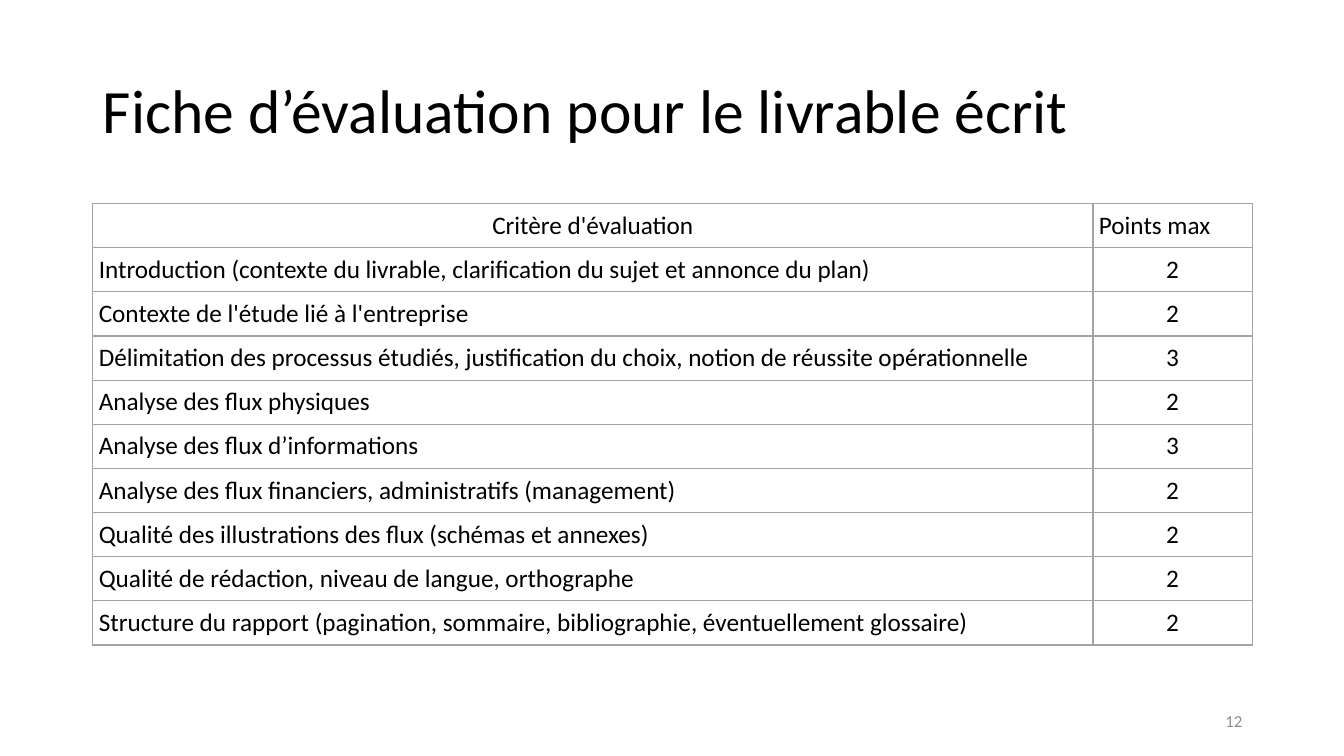
from lxml import etree
from pptx import Presentation
from pptx.dml.color import RGBColor
from pptx.enum.text import MSO_ANCHOR, PP_ALIGN
from pptx.oxml.ns import qn
from pptx.util import Inches, Pt

TITLE = "Fiche d’évaluation pour le livrable écrit"
HEADER = ("Critère d'évaluation", "Points max")
CRITERIA = [
    ("Introduction (contexte du livrable, clarification du sujet et annonce du plan)", 2),
    ("Contexte de l'étude lié à l'entreprise", 2),
    ("Délimitation des processus étudiés, justification du choix, notion de réussite opérationnelle", 3),
    ("Analyse des flux physiques", 2),
    ("Analyse des flux d’informations", 3),
    ("Analyse des flux financiers, administratifs (management)", 2),
    ("Qualité des illustrations des flux (schémas et annexes)", 2),
    ("Qualité de rédaction, niveau de langue, orthographe", 2),
    ("Structure du rapport (pagination, sommaire, bibliographie, éventuellement glossaire)", 2),
]
PAGE_NUMBER = "12"

FONT = "Calibri"
BLACK, GREY, BORDER = "000000", "8C8C8C", "A3A3A3"
LEFT, WIDTH = 0.92, 11.5
TABLE_TOP, ROW_H = 2.02, 0.438
COL_WIDTHS = (9.92, 1.58)
CELL_FORMAT = {
    "margin_left": Inches(0.06),
    "margin_right": Inches(0.06),
    "margin_top": Inches(0.06),
    "margin_bottom": Inches(0.06),
    "vertical_anchor": MSO_ANCHOR.MIDDLE,
}


def rgb(color):
    return RGBColor.from_string(color)


def write(tf, text, size, color=BLACK, align=PP_ALIGN.LEFT):
    p = tf.paragraphs[0]
    p.alignment = align
    r = p.add_run()
    r.text = text
    r.font.name = FONT
    r.font.size = Pt(size)
    r.font.bold = False
    r.font.color.rgb = rgb(color)
    return p


def add_borders(cell):
    tc_pr = cell._tc.get_or_add_tcPr()
    for i, side in enumerate(("lnL", "lnR", "lnT", "lnB")):
        ln = etree.Element(qn(f"a:{side}"), w=str(Pt(1)))
        fill = etree.SubElement(ln, qn("a:solidFill"))
        etree.SubElement(fill, qn("a:srgbClr"), val=BORDER)
        tc_pr.insert(i, ln)


def add_title(s):
    sp = s.shapes.title
    sp.left, sp.top = Inches(LEFT), Inches(0.4)
    sp.width, sp.height = Inches(WIDTH), Inches(1.45)
    tf = sp.text_frame
    tf.word_wrap = True
    tf.vertical_anchor = MSO_ANCHOR.MIDDLE
    write(tf, TITLE, 44).line_spacing = 0.9


def add_criteria_table(s):
    rows = [HEADER, *CRITERIA]
    table = s.shapes.add_table(
        len(rows), len(HEADER), Inches(LEFT), Inches(TABLE_TOP),
        Inches(WIDTH), Inches(ROW_H * len(rows))).table
    table.first_row = table.horz_banding = False
    for column, width in zip(table.columns, COL_WIDTHS):
        column.width = Inches(width)
    for i, row in enumerate(rows):
        table.rows[i].height = Inches(ROW_H)
        for j, value in enumerate(row):
            cell = table.cell(i, j)
            for name, setting in CELL_FORMAT.items():
                setattr(cell, name, setting)
            cell.fill.background()
            add_borders(cell)
            # Only the first heading and the points are centred
            centred = (i == 0) == (j == 0)
            write(cell.text_frame, str(value), 18,
                  align=PP_ALIGN.CENTER if centred else PP_ALIGN.LEFT)


def add_page_number(s):
    sp = s.shapes.add_textbox(Inches(9.42), Inches(6.95), Inches(3), Inches(0.4))
    tf = sp.text_frame
    tf.word_wrap = True
    tf.vertical_anchor = MSO_ANCHOR.MIDDLE
    write(tf, PAGE_NUMBER, 12, GREY, PP_ALIGN.RIGHT)


def main():
    prs = Presentation()
    prs.slide_width, prs.slide_height = Inches(13.33), Inches(7.5)
    s = prs.slides.add_slide(prs.slide_layouts[5])
    add_title(s)
    add_criteria_table(s)
    add_page_number(s)
    prs.save("out.pptx")


if __name__ == "__main__":
    main()
